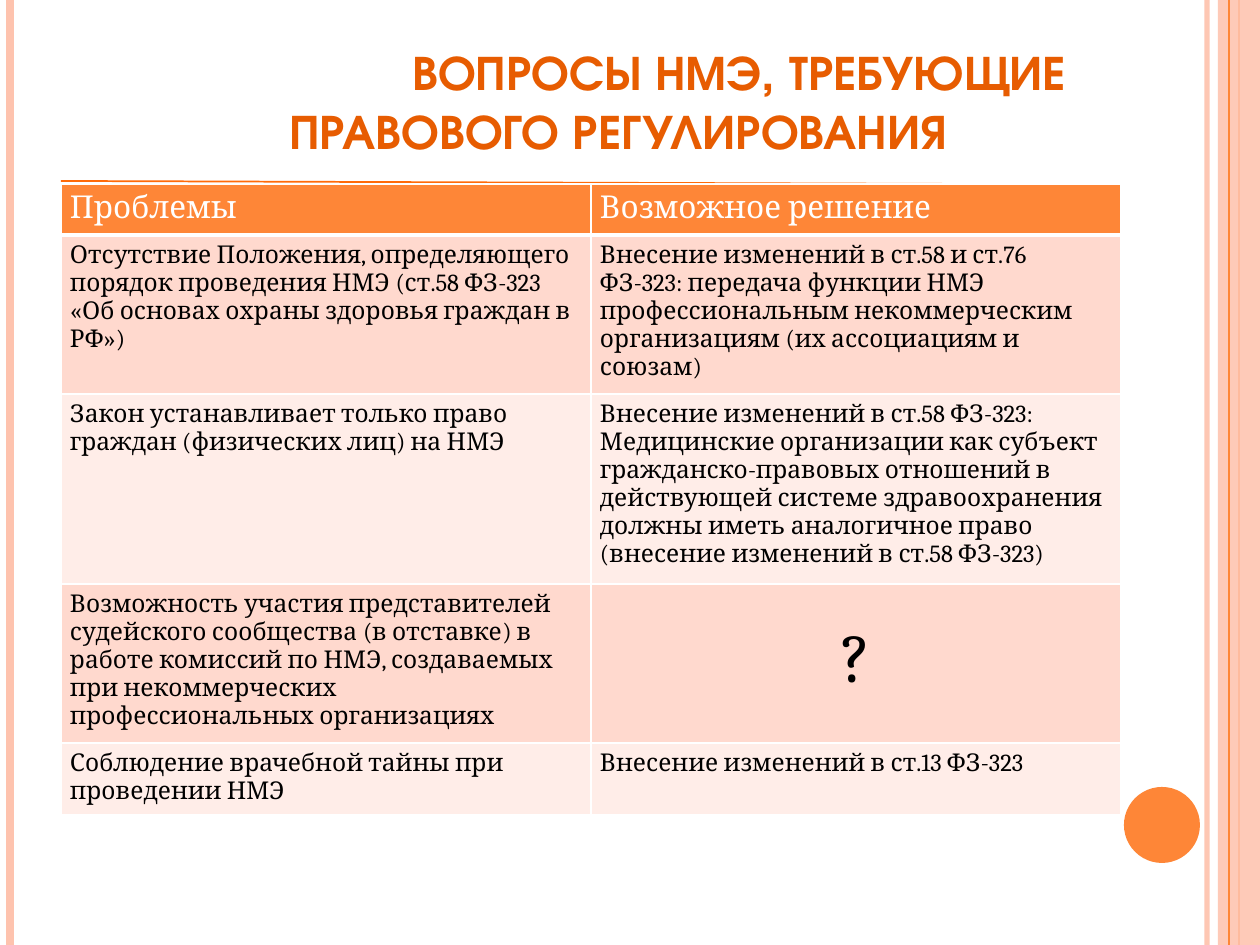
from lxml import etree
from pptx import Presentation
from pptx import util as u
from pptx.dml.color import RGBColor
from pptx.enum import shapes, text
from pptx.oxml.ns import qn

SCALE = 914400 / 126  # EMU in one px
WIDTH, HEIGHT = 1260, 945

COLORS = {
    "white": "FFFFFF",
    "black": "000000",
    "orange": "FE8637",
    "peach": "FEC3AE",
    "title": "E75C01",
    "rule": "FF6B0A",
    "band_dark": "FFD9CE",
    "band_light": "FFEDE8",
}

# Title lines with their left indents in px
TITLE = [
    ("ВОПРОСЫ НМЭ, ТРЕБУЮЩИЕ", 356),
    ("ПРАВОВОГО РЕГУЛИРОВАНИЯ", 233),
]

ROWS = [
    ("Проблемы", "Возможное решение"),
    ("Отсутствие Положения, определяющего порядок проведения НМЭ "
     "(ст.58 ФЗ-323 «Об основах охраны здоровья граждан в РФ»)",
     "Внесение изменений в ст.58 и ст.76 ФЗ-323: передача функции НМЭ "
     "профессиональным некоммерческим организациям (их ассоциациям и союзам)"),
    ("Закон устанавливает только право граждан (физических лиц) на НМЭ",
     "Внесение изменений в ст.58 ФЗ-323: Медицинские организации как субъект "
     "гражданско-правовых отношений в действующей системе здравоохранения "
     "должны иметь аналогичное право (внесение изменений в ст.58 ФЗ-323)"),
    ("Возможность участия представителей судейского сообщества (в отставке) "
     "в работе комиссий по НМЭ, создаваемых при некоммерческих "
     "профессиональных организациях",
     "?"),
    ("Соблюдение врачебной тайны при проведении НМЭ",
     "Внесение изменений в ст.13 ФЗ-323"),
]
ROW_HEIGHTS = [51, 159, 190, 159, 72]
COLUMN_WIDTH = 530


def px(length):
    return u.Emu(round(length * SCALE))


def rgb(name):
    return RGBColor.from_string(COLORS[name])


def set_alpha(element, percent):
    color = element.find(".//" + qn("a:srgbClr"))
    etree.SubElement(color, qn("a:alpha"), val=str(percent * 1000))


def style_font(paragraph, name, size, color, bold=False):
    for run in paragraph.runs:
        run.font.name = name
        run.font.size = u.Pt(size)
        run.font.bold = bold
        run.font.color.rgb = rgb(color)


def add_line(slide, start, end, color, weight, alpha=None):
    line = slide.shapes.add_connector(
        shapes.MSO_CONNECTOR.STRAIGHT, *map(px, start + end))
    line.line.color.rgb = rgb(color)
    line.line.width = u.Pt(weight)
    properties = line._element.spPr
    if alpha:
        set_alpha(properties, alpha)
    etree.SubElement(properties, qn("a:effectLst"))


def add_stripe(slide, x, color, weight, alpha=None):
    add_line(slide, (x, 0), (x, HEIGHT), color, weight, alpha)


def add_solid(slide, kind, box, color, alpha=None):
    solid = slide.shapes.add_shape(kind, *map(px, box))
    solid.shadow.inherit = False
    solid.fill.solid()
    solid.fill.fore_color.rgb = rgb(color)
    solid.line.fill.background()
    if alpha:
        set_alpha(solid._element.spPr, alpha)


def add_title(slide):
    frame = slide.shapes.add_textbox(*map(px, (44, 35, 1111, 131))).text_frame
    frame.word_wrap = True
    frame.text = "\n".join(line for line, _ in TITLE)
    for paragraph, (_, indent) in zip(frame.paragraphs, TITLE):
        paragraph._p.get_or_add_pPr().set("marL", str(px(indent)))
        style_font(paragraph, "TeX Gyre Adventor", 28, "title", bold=True)


def set_borders(cell, bottom):
    properties = cell._tc.get_or_add_tcPr()
    for side, weight in (("L", 1), ("R", 1), ("T", 1), ("B", bottom)):
        border = etree.SubElement(
            properties, qn("a:ln" + side), w=str(u.Pt(weight)))
        fill = etree.SubElement(border, qn("a:solidFill"))
        etree.SubElement(fill, qn("a:srgbClr"), val=COLORS["white"])


def fill_cell(cell, words, row):
    header = row == 0
    set_borders(cell, bottom=3 if header else 1)
    cell.fill.solid()
    band = "band_dark" if row % 2 else "band_light"
    cell.fill.fore_color.rgb = rgb("orange" if header else band)
    cell.margin_left = cell.margin_right = px(9)
    cell.margin_top = cell.margin_bottom = px(6)
    cell.text_frame.text = words
    paragraph = cell.text_frame.paragraphs[0]
    size = 18 if header else 14
    if words == "?":
        size = 40
        paragraph.alignment = text.PP_ALIGN.CENTER
        cell.vertical_anchor = text.MSO_ANCHOR.MIDDLE
        cell.margin_bottom = px(14)
    style_font(paragraph, "Cambria", size, "white" if header else "black")


def add_problem_table(slide):
    columns = len(ROWS[0])
    box = (61, 184, columns * COLUMN_WIDTH, sum(ROW_HEIGHTS))
    table = slide.shapes.add_table(len(ROWS), columns, *map(px, box)).table
    for column in table.columns:
        column.width = px(COLUMN_WIDTH)
    for row, (height, entries) in enumerate(zip(ROW_HEIGHTS, ROWS)):
        table.rows[row].height = px(height)
        for column, words in enumerate(entries):
            fill_cell(table.cell(row, column), words, row)


def main():
    deck = Presentation()
    deck.slide_width, deck.slide_height = px(WIDTH), px(HEIGHT)
    slide = deck.slides.add_slide(deck.slide_layouts[6])

    # Side decoration
    add_stripe(slide, 1207, "peach", 3, alpha=93)
    add_stripe(slide, 10, "peach", 4.5)
    add_stripe(slide, 1239, "orange", 1.5)
    add_solid(slide, shapes.MSO_SHAPE.RECTANGLE, (1218, 0, 42, HEIGHT),
              "peach", alpha=87)
    add_stripe(slide, 1229, "orange", 0.75)
    add_solid(slide, shapes.MSO_SHAPE.OVAL, (1124, 787, 76, 76), "orange")

    # Title and the rule below it
    add_title(slide)
    add_line(slide, (61, 181), (979, 184), "rule", 1)

    # Problems and possible solutions
    add_problem_table(slide)

    deck.save("out.pptx")


if __name__ == "__main__":
    main()
